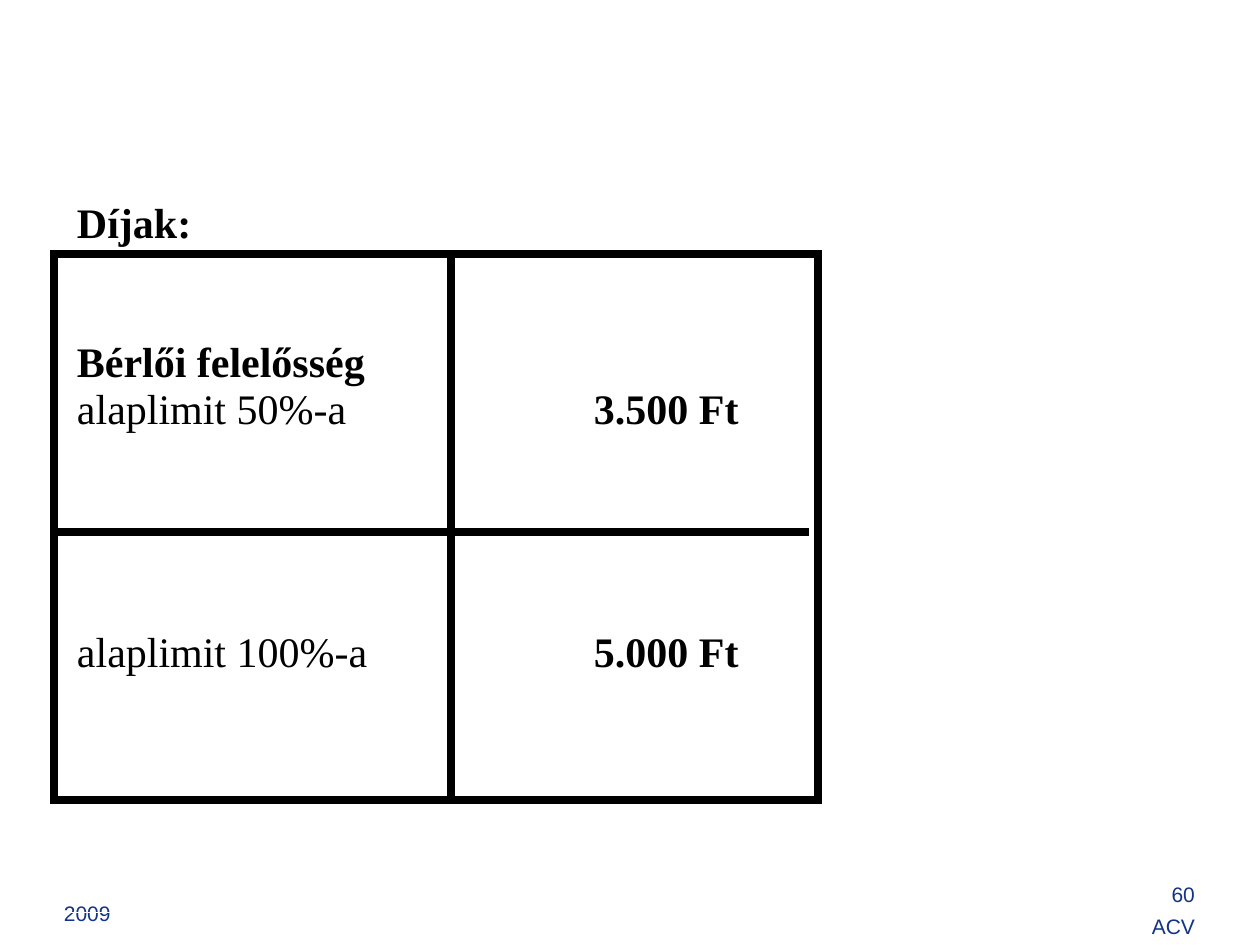
import pptx
import pptx.util
import pptx.dml.color
import pptx.enum.shapes
import pptx.enum.text
import pptx.oxml.ns
from lxml import etree

PX = 914400 / 126
BLACK = pptx.dml.color.RGBColor(0, 0, 0)
NAVY = pptx.dml.color.RGBColor(0x11, 0x33, 0x88)
ALIGN = pptx.enum.text.PP_ALIGN
COLUMNS = [507, 204, 204, 217]
ROWS = [246, 122, 121, 132, 98]


def px(n):
    return pptx.util.Emu(round(n * PX))


def style(p, name, size, color, bold=False):
    p.font.name = name
    p.font.size = pptx.util.Pt(size)
    p.font.color.rgb = color
    p.font.bold = bold


def add_footer(slide, x, y, lines, align, inset):
    sp = slide.shapes.add_textbox(px(x), px(y), px(292), px(76))
    tf = sp.text_frame
    tf.word_wrap = True
    tf.margin_left = tf.margin_right = tf.margin_bottom = 0
    tf.margin_top = px(inset)
    for i, line in enumerate(lines):
        p = tf.paragraphs[0] if i == 0 else tf.add_paragraph()
        p.text = line
        p.alignment = align
        if i:
            p.space_before = pptx.util.Pt(3.5)
        style(p, "Arial", 12, NAVY)


def fill_cell(cell, lines, indent=13):
    cell.vertical_anchor = pptx.enum.text.MSO_ANCHOR.BOTTOM
    cell.margin_left = px(indent)
    tf = cell.text_frame
    for i, (text, bold, gap) in enumerate(lines):
        p = tf.paragraphs[0] if i == 0 else tf.add_paragraph()
        p.text = text
        if gap:
            p.space_before = pptx.util.Pt(gap)
        style(p, "Times New Roman", 24, BLACK, bold)


def add_fee_table(slide):
    frame = slide.shapes.add_table(len(ROWS), len(COLUMNS), px(64), px(183),
                                   px(sum(COLUMNS)), px(sum(ROWS)))
    table = frame.table
    table.first_row = table.horz_banding = False
    for column, width in zip(table.columns, COLUMNS):
        column.width = px(width)
    for row, height in zip(table.rows, ROWS):
        row.height = px(height)
    for cell in table.iter_cells():
        cell.fill.background()
    fill_cell(table.cell(0, 0), [("Díjak:", True, 0),
                                 ("Bérlői felelősség", True, 53),
                                 ("alaplimit 50%-a", False, 0)])
    fill_cell(table.cell(0, 1), [("3.500 Ft", True, 0)], 23)
    fill_cell(table.cell(2, 0), [("alaplimit 100%-a", False, 0)])
    fill_cell(table.cell(2, 1), [("5.000 Ft", True, 0)], 23)


def set_line(sp):
    sp.line.color.rgb = BLACK
    sp.line.width = pptx.util.Pt(4.5)


def add_frame(slide, x, y, w, h):
    sp = slide.shapes.add_shape(pptx.enum.shapes.MSO_SHAPE.RECTANGLE,
                                px(x), px(y), px(w), px(h))
    sp.shadow.inherit = False
    sp.fill.background()
    set_line(sp)
    ln = sp.line._get_or_add_ln()
    etree.SubElement(ln, pptx.oxml.ns.qn("a:miter"), lim="800000")


def add_rule(slide, x1, y1, x2, y2):
    line = slide.shapes.add_connector(pptx.enum.shapes.MSO_CONNECTOR.STRAIGHT,
                                      px(x1), px(y1), px(x2), px(y2))
    set_line(line)
    etree.SubElement(line._element.spPr, pptx.oxml.ns.qn("a:effectLst"))


def main():
    prs = pptx.Presentation()
    prs.slide_width, prs.slide_height = px(1260), px(945)
    slide = prs.slides.add_slide(prs.slide_layouts[6])
    add_footer(slide, 64, 869, ["2009"], ALIGN.LEFT, 38)
    add_footer(slide, 903, 869, ["60", "ACV"], ALIGN.RIGHT, 13)
    add_fee_table(slide)
    add_frame(slide, 54, 254, 764, 546)
    add_rule(slide, 54, 532, 809, 532)
    add_rule(slide, 451, 254, 451, 800)
    prs.save("out.pptx")


if __name__ == "__main__":
    main()
